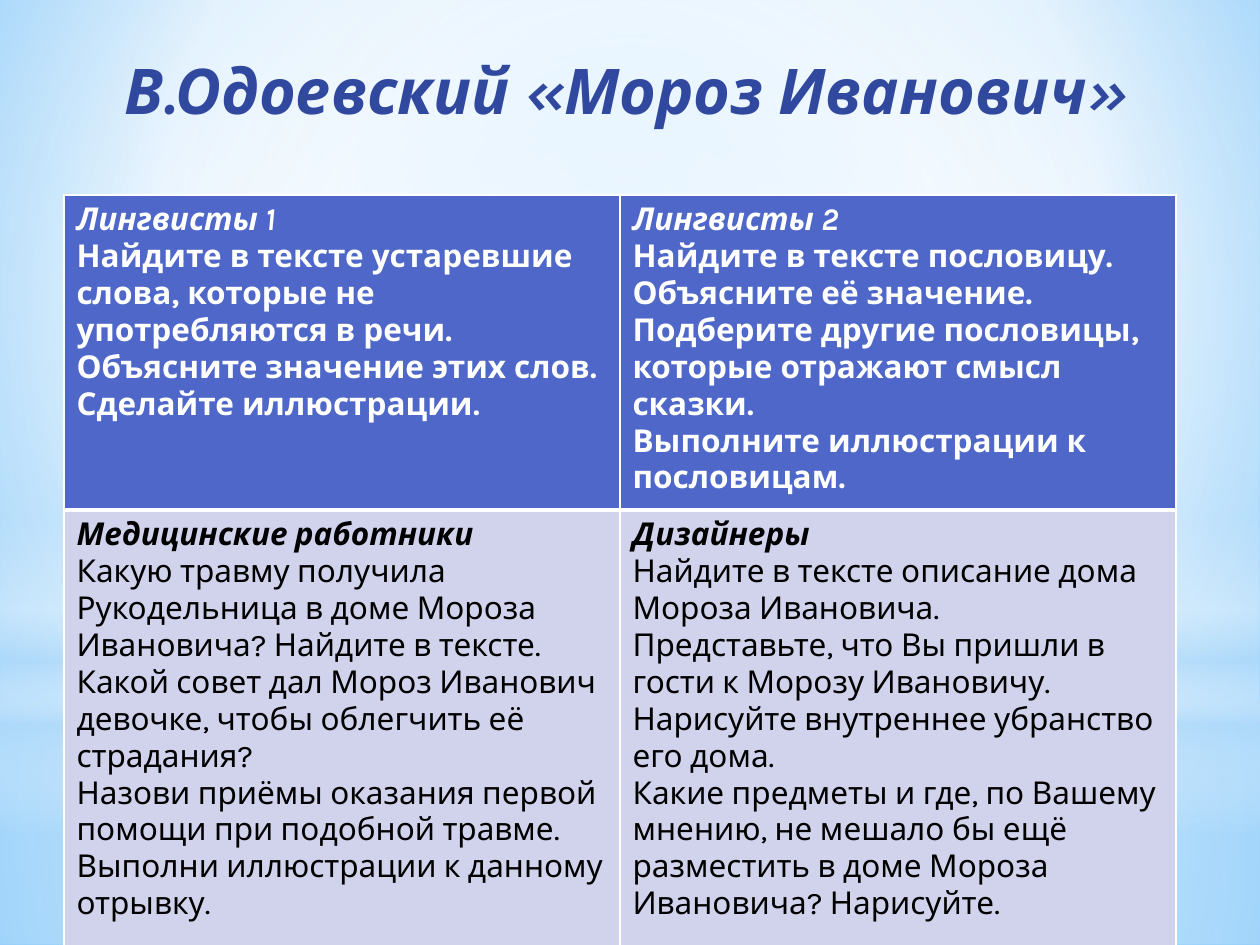
import pptx
import pptx.util
import pptx.oxml
import pptx.oxml.ns
import pptx.dml.color
import pptx.enum.shapes
import pptx.enum.text
from lxml import etree

THEME = {
    "font": "Karla", "title_size": 36, "body_size": 18,
    "title": "31489F", "head_text": "FFFFFF", "body_text": "000000",
    "head_fill": "4E67C8", "body_fill": "D0D3EB", "border": "FFFFFF",
    "white": "FFFFFF", "haze": "B4DCFA", "sky": "9ED5FF", "deep_sky": "5BB9FF",
}
SCALE = 914400 / 126
CENTER = (50, 50, 50, 50)

TITLE = "В.Одоевский «Мороз Иванович»"
TEAMS = [
    [
        ("Лингвисты 1", [
            "Найдите в тексте устаревшие слова, которые не употребляются в речи.",
            "Объясните значение этих слов.",
            "Сделайте иллюстрации.",
        ]),
        ("Лингвисты 2", [
            "Найдите в тексте пословицу.",
            "Объясните её значение.",
            "Подберите другие пословицы, которые отражают смысл сказки.",
            "Выполните иллюстрации к пословицам.",
        ]),
    ],
    [
        ("Медицинские работники", [
            "Какую травму получила Рукодельница в доме Мороза Ивановича? Найдите в тексте.",
            "Какой совет дал Мороз Иванович девочке, чтобы облегчить её страдания?",
            "Назови приёмы оказания первой помощи при подобной травме.",
            "Выполни иллюстрации к данному отрывку.",
        ]),
        ("Дизайнеры", [
            "Найдите в тексте описание дома Мороза Ивановича.",
            "Представьте, что Вы пришли в гости к Морозу Ивановичу. "
            "Нарисуйте внутреннее убранство его дома.",
            "Какие предметы и где, по Вашему мнению, не мешало бы ещё разместить "
            "в доме Мороза Ивановича? Нарисуйте.",
        ]),
    ],
]
ROW_HEIGHTS = [308, 442]
COLUMN_WIDTH = 556

SKY = [(0, "sky", 100), (60, "white", 100), (100, "deep_sky", 100)]
GLOWS = [
    ("RECTANGLE", (0, 703, 1260, 242),
     [(0, "white", 91), (37, "white", 76), (100, "haze", 79)], CENTER),
    ("RECTANGLE", (0, 0, 1260, 703),
     [(0, "white", 89), (48, "white", 62), (100, "haze", 79)], CENTER),
    ("RECTANGLE", (0, 519, 1260, 315),
     [(0, "white", 0), (29, "white", 30), (45, "haze", 40),
      (55, "white", 26), (65, "haze", 60), (100, "white", 0)], None),
    ("OVAL", (0, 221, 1260, 703), [(0, "white", 100), (56, "white", 0)], CENTER),
]


def px(*lengths):
    return [pptx.util.Emu(round(length * SCALE)) for length in lengths]


def color(name):
    return pptx.dml.color.RGBColor.from_string(THEME[name])


def add_node(parent, tag, **attributes):
    node = etree.SubElement(parent, pptx.oxml.ns.qn(tag))
    for key, value in attributes.items():
        node.set(key, str(value))
    return node


def paint_gradient(fill, properties, stops, focus):
    fill.gradient()
    gradient = properties.find(pptx.oxml.ns.qn("a:gradFill"))
    for child in list(gradient):
        gradient.remove(child)
    stop_list = add_node(gradient, "a:gsLst")
    for position, name, opacity in stops:
        stop = add_node(stop_list, "a:gs", pos=position * 1000)
        tone = add_node(stop, "a:srgbClr", val=THEME[name])
        if opacity < 100:
            add_node(tone, "a:alpha", val=opacity * 1000)
    if focus:
        circle = add_node(gradient, "a:path", path="circle")
        sides = {side: value * 1000 for side, value in zip("ltrb", focus)}
        add_node(circle, "a:fillToRect", **sides)
    else:
        add_node(gradient, "a:lin", ang=90 * 60000, scaled=0)


def write(paragraph, text, size, tone, bold, italic):
    run = paragraph.add_run()
    run.text = text
    run.font.name = THEME["font"]
    run.font.size = pptx.util.Pt(THEME[size])
    run.font.color.rgb = color(tone)
    run.font.bold, run.font.italic = bold, italic


def set_borders(cell, bottom):
    properties = cell._tc.get_or_add_tcPr()
    for index, (side, width) in enumerate([("L", 1), ("R", 1), ("T", 1), ("B", bottom)]):
        line = pptx.oxml.parse_xml(
            f'<a:ln{side} {pptx.oxml.ns.nsdecls("a")} w="{width * 12700}"/>')
        add_node(add_node(line, "a:solidFill"), "a:srgbClr", val=THEME["border"])
        properties.insert(index, line)


def add_backdrop(slide):
    background = slide.background.fill
    properties = slide._element.cSld.find(".//" + pptx.oxml.ns.qn("p:bgPr"))
    paint_gradient(background, properties, SKY, (20, 10, 20, 60))
    for kind, place, stops, focus in GLOWS:
        shape_type = getattr(pptx.enum.shapes.MSO_SHAPE, kind)
        glow = slide.shapes.add_shape(shape_type, *px(*place))
        glow.shadow.inherit = False
        glow.line.fill.background()
        paint_gradient(glow.fill, glow._element.spPr, stops, focus)


def add_title(slide):
    frame = slide.shapes.add_textbox(*px(105, 45, 1041, 110)).text_frame
    frame.word_wrap = True
    frame.vertical_anchor = pptx.enum.text.MSO_ANCHOR.TOP
    heading = frame.paragraphs[0]
    heading.alignment = pptx.enum.text.PP_ALIGN.CENTER
    write(heading, TITLE, "title_size", "title", True, True)


def add_teams(slide):
    width, height = COLUMN_WIDTH * len(TEAMS[0]), sum(ROW_HEIGHTS)
    table = slide.shapes.add_table(
        len(TEAMS), len(TEAMS[0]), *px(64, 195, width, height)).table
    for column in table.columns:
        column.width = px(COLUMN_WIDTH)[0]
    for row_index, teams in enumerate(TEAMS):
        table.rows[row_index].height = px(ROW_HEIGHTS[row_index])[0]
        is_head = row_index == 0
        part = "head" if is_head else "body"
        for column_index, (team, tasks) in enumerate(teams):
            cell = table.cell(row_index, column_index)
            cell.fill.solid()
            cell.fill.fore_color.rgb = color(part + "_fill")
            set_borders(cell, 3 if is_head else 1)
            frame = cell.text_frame
            write(frame.paragraphs[0], team, "body_size", part + "_text", True, True)
            for task in tasks:
                write(frame.add_paragraph(), task, "body_size", part + "_text", is_head, False)


def main():
    deck = pptx.Presentation()
    deck.slide_width, deck.slide_height = px(1260, 945)
    slide = deck.slides.add_slide(deck.slide_layouts[6])
    add_backdrop(slide)
    add_title(slide)
    add_teams(slide)
    deck.save("out.pptx")


if __name__ == "__main__":
    main()
